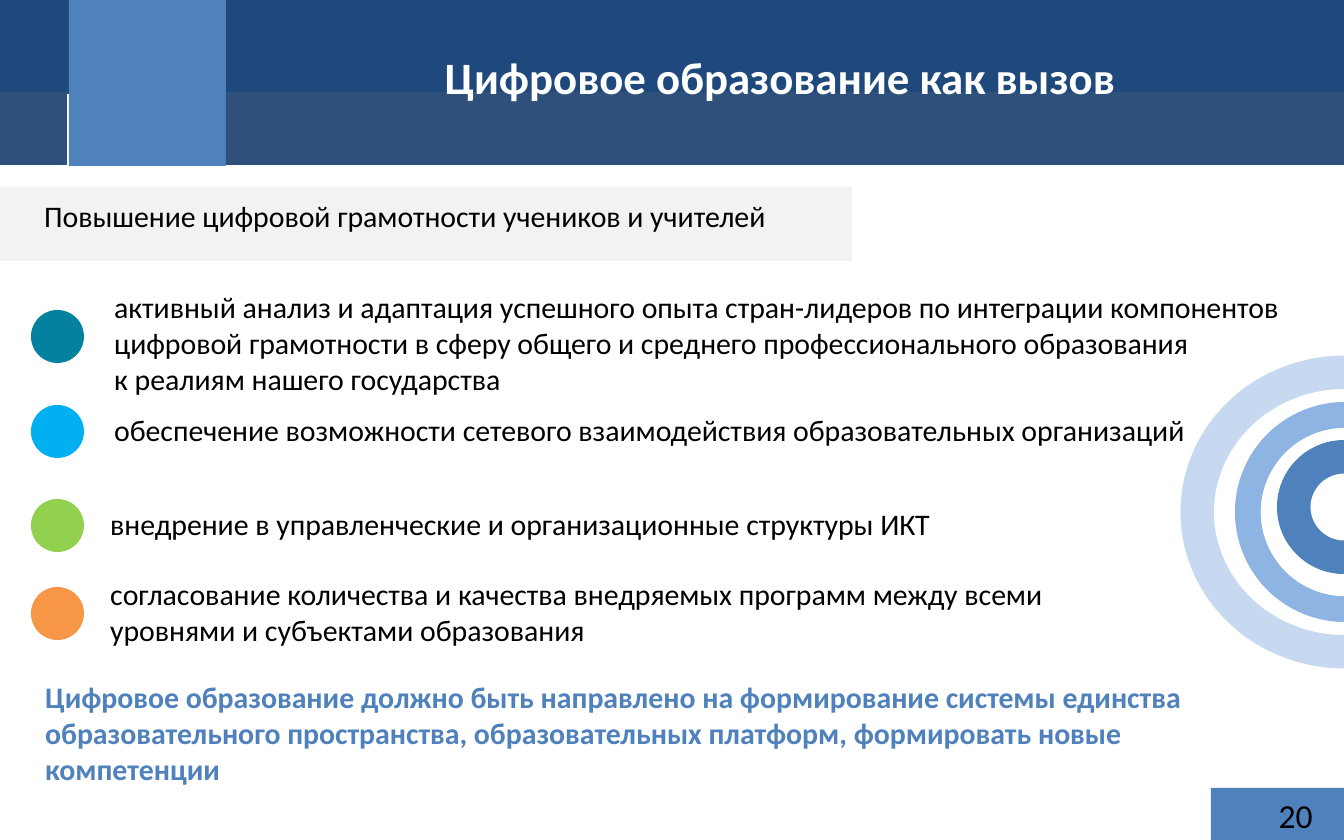
from pptx import Presentation
from pptx.dml.color import RGBColor
from pptx.enum.shapes import MSO_SHAPE as Kind
from pptx.enum.text import MSO_ANCHOR as Anchor, MSO_AUTO_SIZE as Fit, PP_ALIGN as Align
from pptx.util import Pt

PX = 9144000 / 1344
NAVY = RGBColor(0x1F, 0x49, 0x7D)
SLATE = RGBColor(0x2E, 0x50, 0x7A)
BLUE = RGBColor(0x4F, 0x81, 0xBD)
SKY = RGBColor(0x8E, 0xB4, 0xE3)
PALE = RGBColor(0xC6, 0xD9, 0xF1)
TEAL = RGBColor(0x04, 0x81, 0x9E)
CYAN = RGBColor(0x00, 0xB0, 0xF0)
GREEN = RGBColor(0x92, 0xD0, 0x50)
ORANGE = RGBColor(0xF7, 0x96, 0x46)
GREY = RGBColor(0xF2, 0xF2, 0xF2)
WHITE = RGBColor(0xFF, 0xFF, 0xFF)
BLACK = RGBColor(0, 0, 0)

deck = Presentation()
deck.slide_width, deck.slide_height = round(1344 * PX), round(840 * PX)
slide = deck.slides.add_slide(deck.slide_layouts[5])
shapes = slide.shapes


def draw(kind, box, color):
    """Add a flat shape; box is left, top, width, height in px."""
    shape = shapes.add_shape(kind, *[round(n * PX) for n in box])
    shape.shadow.inherit = False
    shape.fill.solid()
    shape.fill.fore_color.rgb = color
    shape.line.fill.background()
    return shape


def write(text, box, size=16, color=BLACK, bold=False, align=Align.LEFT,
          anchor=Anchor.TOP, holder=None):
    """Put text in a new box, or in the holder given."""
    left, top, width, height = [round(n * PX) for n in box]
    if holder is None:
        holder = shapes.add_textbox(left, top, width, height)
    holder.left, holder.top, holder.width, holder.height = left, top, width, height
    frame = holder.text_frame
    frame.text = text
    frame.word_wrap = True
    frame.auto_size = Fit.NONE
    frame.vertical_anchor = anchor
    for para in frame.paragraphs:
        para.alignment = align
        for run in para.runs:
            font = run.font
            font.name, font.size, font.bold = "Calibri", Pt(size), bold
            font.color.rgb = color


# Header, subtitle strip and page number tab
for box, color in [
    ((0, 0, 1344, 94), NAVY),
    ((69, 0, 157, 166), BLUE),
    ((226, 92, 1118, 73), SLATE),
    ((0, 92, 67, 73), SLATE),
    ((0, 187, 852, 74), GREY),
    ((1211, 788, 133, 52), BLUE),
]:
    draw(Kind.RECTANGLE, box, color)

title = shapes.title
shapes._spTree.append(title._element)  # bring in front of the header
write("Цифровое образование как вызов", (216, 43, 1128, 67), size=24, color=WHITE,
      bold=True, align=Align.CENTER, holder=title)
write("Повышение цифровой грамотности учеников и учителей", (31, 191, 1313, 50))
write("20", (1259, 793, 67, 44), size=18, align=Align.RIGHT, anchor=Anchor.MIDDLE)

# Rings cut by the right edge
for box, band, color in [
    ((1277, 440, 134, 134), 0.25, BLUE),
    ((1235, 402, 220, 220), 0.117, SKY),
    ((1188, 348, 313, 328), 0.107, PALE),
]:
    ring = draw(Kind.BLOCK_ARC, box, color)
    ring.rotation = 270
    ring.adjustments[0] = 108
    ring.adjustments[1] = 0
    ring.adjustments[2] = band

# Measures: dot top, dot colour, text box, text
for top, color, box, text in [
    (310, TEAL, (101, 282, 1244, 122),
     "активный анализ и адаптация успешного опыта стран-лидеров по интеграции "
     "компонентов цифровой грамотности в сферу общего и среднего "
     "профессионального образования\nк реалиям нашего государства"),
    (405, CYAN, (101, 405, 1122, 46),
     "обеспечение возможности сетевого взаимодействия образовательных организаций"),
    (499, GREEN, (97, 499, 1094, 50),
     "внедрение в управленческие и организационные структуры ИКТ"),
    (587, ORANGE, (97, 569, 1086, 86),
     "согласование количества и качества внедряемых программ между всеми "
     "уровнями и субъектами образования"),
]:
    draw(Kind.FLOWCHART_CONNECTOR, (31, top, 53, 53), color)
    write(text, box)

write("Цифровое образование должно быть направлено на формирование системы единства "
      "образовательного пространства, образовательных платформ, формировать новые "
      "компетенции", (32, 672, 1179, 122), color=BLUE, bold=True)

deck.save("out.pptx")
